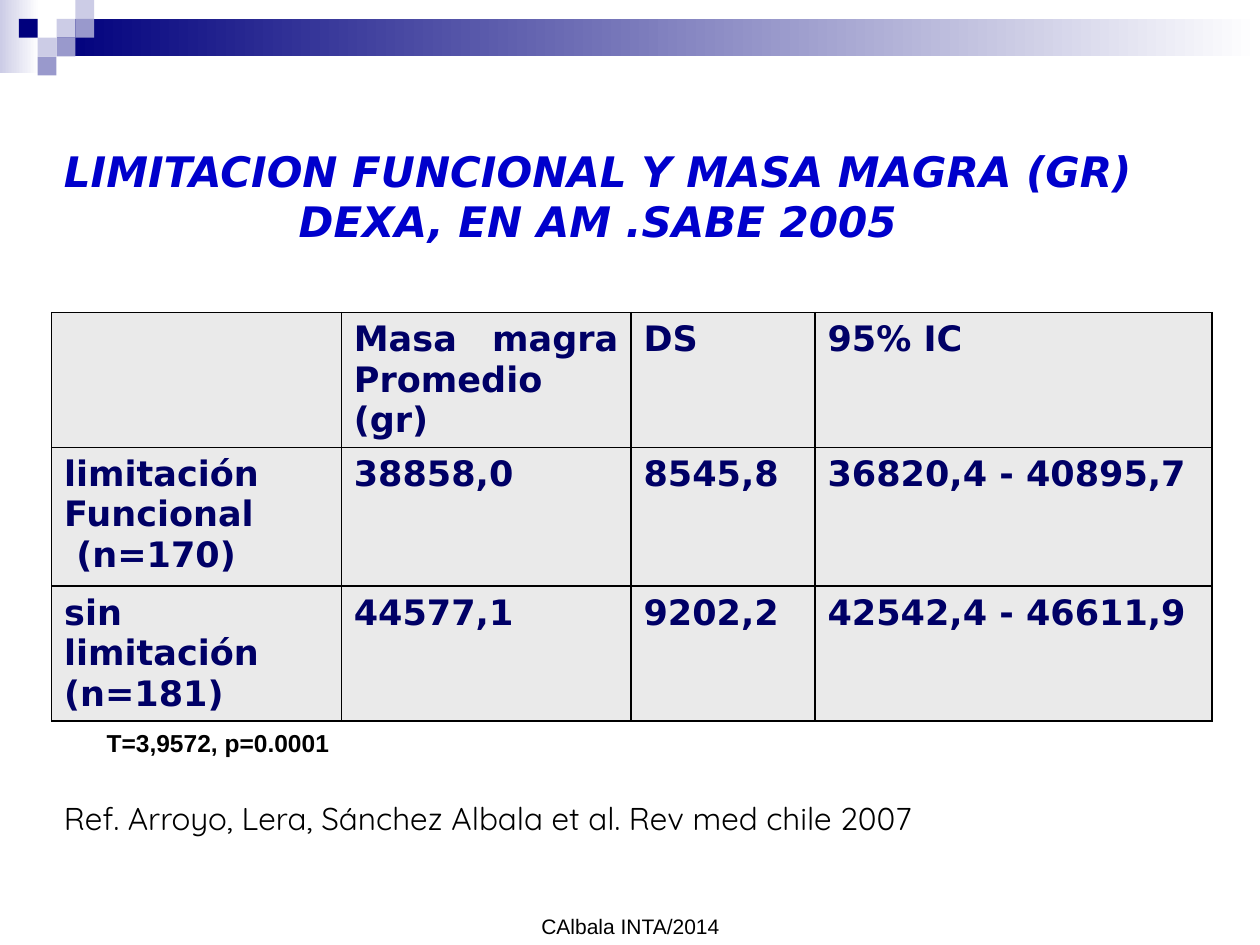
import pptx
import pptx.util
import pptx.dml.color
import pptx.enum.shapes
import pptx.enum.text
import pptx.oxml
import pptx.oxml.ns

Cm = pptx.util.Cm
Pt = pptx.util.Pt
RGBColor = pptx.dml.color.RGBColor
Align = pptx.enum.text.PP_ALIGN
Anchor = pptx.enum.text.MSO_ANCHOR

NAVY = RGBColor(0x00, 0x00, 0x7D)
LAVENDER = RGBColor(0xCC, 0xCC, 0xE6)
PERIWINKLE = RGBColor(0x99, 0x99, 0xCC)
WHITE = RGBColor(0xFF, 0xFF, 0xFF)
BLACK = RGBColor(0x00, 0x00, 0x00)
TITLE_BLUE = RGBColor(0x00, 0x00, 0xCC)
TABLE_BLUE = RGBColor(0x00, 0x00, 0x66)
CELL_GRAY = RGBColor(0xEA, 0xEA, 0xEA)


def format_text(paragraph, font_name, size, color, bold=False, italic=False):
    for run in paragraph.runs:
        run.font.name = font_name
        run.font.size = Pt(size)
        run.font.color.rgb = color
        run.font.bold = bold
        run.font.italic = italic


def add_block(left, top, width, height, color, fade=False):
    block = slide.shapes.add_shape(
        pptx.enum.shapes.MSO_SHAPE.RECTANGLE, Cm(left), Cm(top), Cm(width), Cm(height)
    )
    block.shadow.inherit = False
    block.line.fill.background()
    if fade:
        block.fill.gradient()
        block.fill.gradient_angle = 0
        for stop, stop_color in zip(block.fill.gradient_stops, (color, WHITE)):
            stop.color.rgb = stop_color
    else:
        block.fill.solid()
        block.fill.fore_color.rgb = color


presentation = pptx.Presentation()
presentation.slide_width = Cm(25.4)
presentation.slide_height = Cm(19.05)
slide = presentation.slides.add_slide(presentation.slide_layouts[6])

add_block(0, 0, 0.79, 1.47, LAVENDER, fade=True)
add_block(1.14, 0.38, 24.26, 0.76, NAVY, fade=True)

SQUARE = 0.38
for column, row, color in (
    (3, 1, LAVENDER),
    (4, 0, LAVENDER),
    (4, 1, PERIWINKLE),
    (2, 2, LAVENDER),
    (1, 1, NAVY),
    (3, 2, PERIWINKLE),
    (2, 3, PERIWINKLE),
):
    add_block(column * SQUARE, row * SQUARE, SQUARE, SQUARE, color)

measurements = [
    ["", "Masa magra Promedio (gr)", "DS", "95% IC"],
    ["limitación Funcional\n (n=170)", "38858,0", "8545,8", "36820,4 - 40895,7"],
    ["sin limitación\n(n=181)", "44577,1", "9202,2", "42542,4 - 46611,9"],
]
column_widths = [5.84, 5.84, 3.71, 8.0]
row_heights = [2.7, 2.8, 2.15]
lean_mass = slide.shapes.add_table(
    3, 4, Cm(1.04), Cm(6.3), Cm(sum(column_widths)), Cm(sum(row_heights))
).table
for column, width in zip(lean_mass.columns, column_widths):
    column.width = Cm(width)
for row, height in zip(lean_mass.rows, row_heights):
    row.height = Cm(height)

for row_index, values in enumerate(measurements):
    for column_index, value in enumerate(values):
        cell = lean_mass.cell(row_index, column_index)
        cell.fill.solid()
        cell.fill.fore_color.rgb = CELL_GRAY
        cell.text_frame.text = value
        for paragraph in cell.text_frame.paragraphs:
            left_aligned = (row_index, column_index) == (1, 0)
            paragraph.alignment = Align.LEFT if left_aligned else Align.JUSTIFY
            format_text(paragraph, "DejaVu Sans", 20, TABLE_BLUE, bold=True)
        properties = cell._tc.get_or_add_tcPr()
        for position, side in enumerate(("lnL", "lnR", "lnT", "lnB")):
            border = pptx.oxml.parse_xml(
                f'<a:{side} {pptx.oxml.ns.nsdecls("a")} w="12700"><a:solidFill>'
                f'<a:srgbClr val="{BLACK}"/></a:solidFill></a:{side}>'
            )
            properties.insert(position, border)

texts = [
    ("T=3,9572, p=0.0001", (1.9, 14.55, 6.27, 1.45),
     Align.LEFT, Anchor.TOP, "Arial", 14, BLACK, True, False),
    ("LIMITACION FUNCIONAL Y MASA MAGRA (GR) DEXA, EN AM .SABE 2005", (0, 2.8, 24.1, 3.5),
     Align.CENTER, Anchor.TOP, "DejaVu Sans", 24, TITLE_BLUE, True, True),
    ("Ref. Arroyo, Lera, Sánchez Albala et al. Rev med chile 2007", (1.04, 15.98, 18.64, 1.02),
     Align.LEFT, Anchor.TOP, "Quicksand", 18, BLACK, False, False),
    ("CAlbala INTA/2014", (4.8, 17.78, 15.82, 1.27),
     Align.CENTER, Anchor.BOTTOM, "Arial", 12, BLACK, False, False),
]
for wording, place, alignment, anchor, *style in texts:
    frame = slide.shapes.add_textbox(*map(Cm, place)).text_frame
    frame.word_wrap = True
    frame.vertical_anchor = anchor
    frame.text = wording
    frame.paragraphs[0].alignment = alignment
    format_text(frame.paragraphs[0], *style)

presentation.save("out.pptx")
